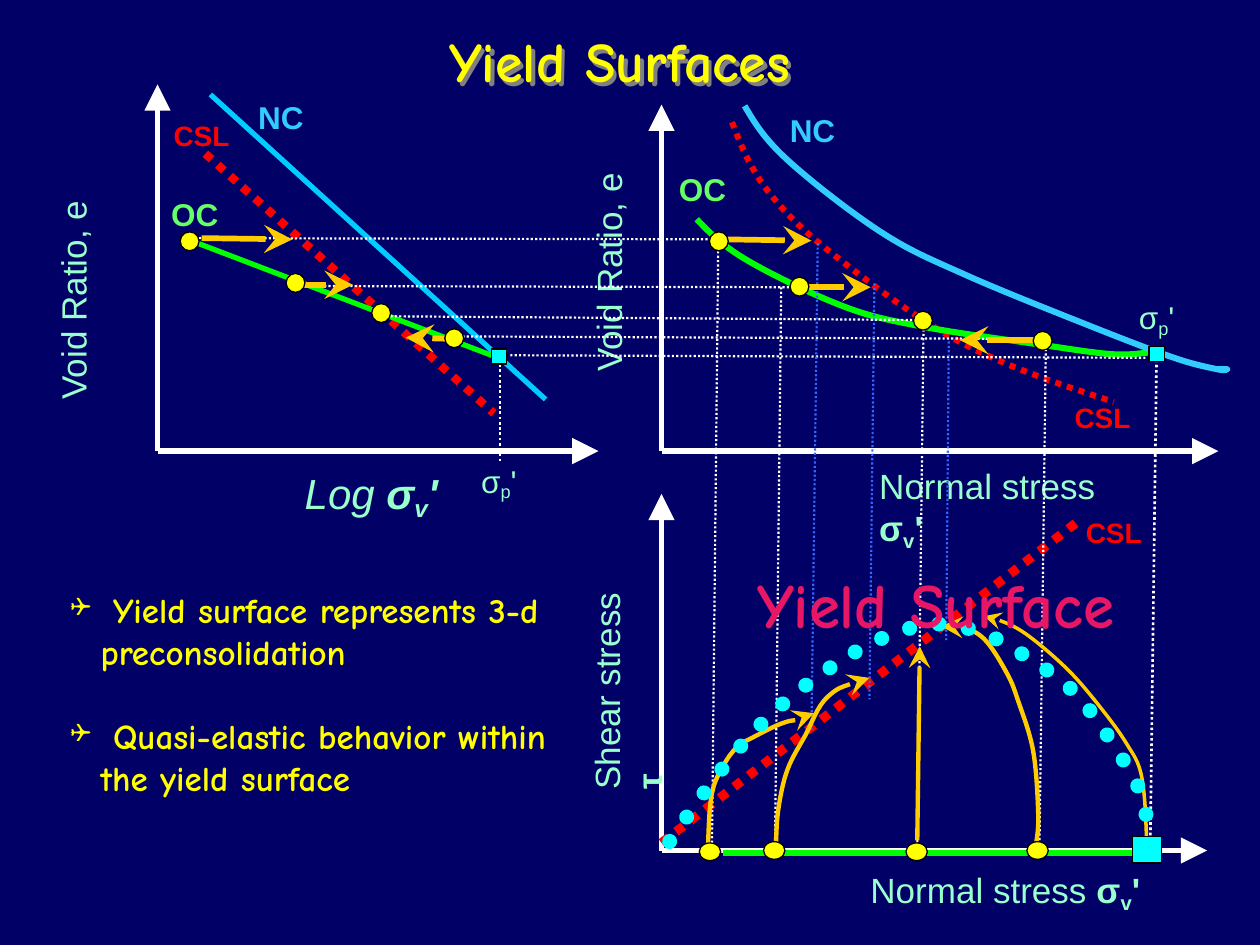
"""Build the soil mechanics slide on yield surfaces with three linked plots."""
from dataclasses import dataclass

from lxml import etree
from pptx import Presentation
from pptx.dml.color import RGBColor
from pptx.enum.dml import MSO_LINE
from pptx.enum.shapes import MSO_CONNECTOR, MSO_SHAPE
from pptx.enum.text import MSO_ANCHOR, PP_ALIGN
from pptx.oxml.ns import qn
from pptx.util import Inches, Pt

STRAIGHT = MSO_CONNECTOR.STRAIGHT
DOTTED = MSO_LINE.ROUND_DOT
CIRCLE, SQUARE = MSO_SHAPE.OVAL, MSO_SHAPE.RECTANGLE
LEFT, CENTER = PP_ALIGN.LEFT, PP_ALIGN.CENTER
TOP, MIDDLE = MSO_ANCHOR.TOP, MSO_ANCHOR.MIDDLE


@dataclass(frozen=True)
class Theme:
    navy: str = "000066"
    white: str = "FFFFFF"
    black: str = "000000"
    yellow: str = "FFFF00"
    mint: str = "99FFCC"
    sky: str = "33CCFF"
    azure: str = "00CCFF"
    red: str = "FF0000"
    green: str = "00FF00"
    pale_green: str = "66FF66"
    orange: str = "FFCC00"
    blue: str = "3366FF"
    cyan: str = "00FFFF"
    crimson: str = "E81766"
    shadow: str = "808080"
    body_font: str = "Arial"
    display_font: str = "Comic Neue"
    banner: int = 36
    title: int = 32
    log_axis: int = 24
    axis: int = 20
    label: int = 18
    small: int = 16


theme = Theme()
presentation = Presentation()
presentation.slide_width, presentation.slide_height = Inches(10), Inches(7.5)
slide = presentation.slides.add_slide(presentation.slide_layouts[6])
slide.background.fill.solid()
slide.background.fill.fore_color.rgb = RGBColor.from_string(theme.navy)
shapes = slide.shapes


def stroke(knots, color, width, dash=None, arrow=None, cap="flat"):
    """Draw a straight line through two knots, or a smooth curve through more."""
    if len(knots) == 2:
        (x1, y1), (x2, y2) = knots
        drawn = shapes.add_connector(STRAIGHT, Inches(x1), Inches(y1), Inches(x2), Inches(y2))
        etree.SubElement(drawn._element.spPr, qn("a:effectLst"))
    else:
        outline = shapes.build_freeform(*map(Inches, knots[0]))
        outline.add_line_segments([tuple(map(Inches, knot)) for knot in knots[1:]], close=False)
        drawn = outline.convert_to_shape()
        drawn.shadow.inherit = False
        drawn.fill.background()
        corner = complex(drawn.left, drawn.top)
        curve = [complex(*map(Inches, knot)) - corner for knot in knots]
        last = len(curve) - 2
        for i, segment in enumerate(list(drawn._element.iter(qn("a:lnTo")))):
            start, end = curve[i:i + 2]
            leave = start + (end - curve[i - 1]) / 6 if i else None
            reach = end - (curve[i + 2] - start) / 6 if i < last else (leave + end) / 2
            leave = (start + reach) / 2 if leave is None else leave
            bend = etree.Element(qn("a:cubicBezTo"))
            for p in (leave, reach, end):
                etree.SubElement(bend, qn("a:pt"), x=str(round(p.real)), y=str(round(p.imag)))
            segment.getparent().replace(segment, bend)
    drawn.line.color.rgb = RGBColor.from_string(color)
    drawn.line.width = Pt(width)
    if dash:
        drawn.line.dash_style = dash
    ln = drawn.line._get_or_add_ln()
    ln.set("cap", cap)
    if arrow:
        etree.SubElement(ln, qn("a:tailEnd"), type=arrow, w="lg", len="lg")


def write(box, paragraphs, size, color, font=theme.body_font, bold=False, wrap=False,
          rotation=0, align=LEFT, anchor=TOP):
    """Add a text box whose runs are (text, bold, italic, baseline) tuples or plain text."""
    text_box = shapes.add_textbox(*map(Inches, box))
    text_box.rotation = rotation
    frame = text_box.text_frame
    frame.word_wrap, frame.vertical_anchor = wrap, anchor
    for i, parts in enumerate(paragraphs):
        paragraph = frame.add_paragraph() if i else frame.paragraphs[0]
        paragraph.alignment = align
        paragraph.font.name, paragraph.font.size = font, Pt(size)
        paragraph.font.bold = bold
        paragraph.font.color.rgb = RGBColor.from_string(color)
        for part in [(parts, None, None, 0)] if isinstance(parts, str) else parts:
            run = paragraph.add_run()
            run.text, run.font.bold, run.font.italic, baseline = part
            if baseline:
                run._r.get_or_add_rPr().set("baseline", str(baseline * 1000))
    return text_box


title = write((0.42, 0.23, 9, 0.5), ["Yield Surfaces"], theme.title, theme.yellow,
              theme.display_font, bold=True, wrap=True, align=CENTER, anchor=MIDDLE)
title_effects = etree.SubElement(title._element.spPr, qn("a:effectLst"))
title_shadow = etree.SubElement(title_effects, qn("a:outerShdw"), dist="35921", dir="2700000")
etree.SubElement(title_shadow, qn("a:srgbClr"), val=theme.shadow)

for origin, top, right in [((1.25, 3.58), 0.67, 4.75), ((5.25, 3.58), 0.83, 9.67),
                           ((5.25, 6.75), 3.92, 9.58)]:
    for tip in [(origin[0], top), (right, origin[1])]:
        stroke([origin, tip], theme.white, 3, arrow="triangle")

vertical_stress = [("σ", True, None, 0), ("v", True, None, -20), ("'", True, None, 0)]
italic_stress = [(text, bold, True, base) for text, bold, _, base in vertical_stress]
normal_stress = [("Normal stress ", None, None, 0)] + vertical_stress
shear_stress = [("Shear stress ", None, None, 0), ("τ", True, None, 0)]
preconsolidation = [("σ", None, None, 0), ("p", None, None, -16), ("'", None, None, 0)]

write((2.32, 3.66, 1.26, 0.5), [[("Log ", None, True, 0)] + italic_stress],
      theme.log_axis, theme.mint)
for box, axis_title, rotation, wrap in [
    ((6.81, 6.84, 2.51, 0.43), normal_stress, 0, True),
    ((6.88, 3.64, 2.3, 0.43), normal_stress, 0, True),
    ((3.83, 5.17, 1.96, 0.43), shear_stress, 270, True),
    ((-0.55, 1.93, 2.25, 0.43), "Void Ratio, e", 270, True),
    ((3.93, 1.94, 1.79, 0.43), "Void Ratio, e", 270, False),
]:
    write(box, [axis_title], theme.axis, theme.mint, wrap=wrap, rotation=rotation)

for name, size, color, box_size, corners in [
    ("NC", theme.label, theme.sky, (0.56, 0.4), [(1.95, 0.73), (6.17, 0.83)]),
    ("OC", theme.label, theme.pale_green, (0.58, 0.4), [(1.26, 1.5), (5.29, 1.3)]),
    ("CSL", theme.small, theme.red, (0.64, 0.37), [(1.28, 0.89), (8.43, 3.13), (8.52, 4.04)]),
]:
    for corner in corners:
        write(corner + box_size, [name], size, color, bold=True)
for corner in [(3.72, 3.62), (8.94, 2.32)]:
    write(corner + (0.55, 0.4), [preconsolidation], theme.label, theme.mint)

stroke([(1.67, 0.75), (4.33, 3.17)], theme.azure, 3)
stroke([(1.63, 1.22), (3.92, 3.28)], theme.red, 4.75, DOTTED)
stroke([(5.25, 6.69), (8.54, 4.15)], theme.red, 5.25, DOTTED)
stroke([(5.81, 0.97), (6.09, 1.51), (6.64, 2.04), (7.65, 2.73), (8.84, 3.19)],
       theme.red, 3.5, DOTTED)
stroke([(1.49, 1.9), (3.98, 2.85)], theme.green, 3)
stroke([(5.53, 1.74), (5.92, 2.06), (6.69, 2.43), (7.31, 2.59), (8.22, 2.73), (8.81, 2.81),
        (9.1, 2.8), (9.16, 2.78), (9.1, 2.8)], theme.green, 3.5)
stroke([(5.74, 6.77), (9.1, 6.77)], theme.green, 3.75)
stroke([(5.91, 0.84), (6.24, 1.26), (6.99, 1.84), (7.66, 2.18), (8.66, 2.59), (9.32, 2.84),
        (9.66, 2.93), (9.74, 2.93), (9.66, 2.93)], theme.sky, 3.5)

for color, width, guides in [
    (theme.white, 1.25, [
        (5.7, 1.96, 5.65, 6.77), (6.2, 2.28, 6.15, 6.78), (7.33, 2.58, 7.28, 6.73),
        (8.3, 2.77, 8.25, 6.71), (1.51, 1.89, 5.87, 1.9), (2.33, 2.27, 6.41, 2.28),
        (3.03, 2.51, 7.3, 2.54), (3.6, 2.67, 8.21, 2.69), (4.05, 2.82, 9.1, 2.84)]),
    (theme.white, 1.5, [(9.18, 2.77, 9.13, 6.64), (3.97, 2.89, 3.97, 3.68)]),
    (theme.white, 1.75, [(6.37, 2.21, 6.34, 2.22)]),
    (theme.blue, 1.25, [
        (6.49, 1.93, 6.44, 5.8), (6.94, 2.25, 6.9, 5.55), (7.53, 2.71, 7.51, 5.08)]),
]:
    for x1, y1, x2, y2 in guides:
        stroke([(x1, y1), (x2, y2)], color, width, DOTTED)

for width, paths in [
    (3.25, [[(1.6, 1.89), (2.32, 1.9)], [(2.39, 2.26), (2.8, 2.26)], [(3.6, 2.69), (3.22, 2.68)],
            [(5.77, 1.9), (6.44, 1.91)], [(6.37, 2.28), (6.91, 2.28)], [(8.21, 2.7), (7.62, 2.7)]]),
    (2.5, [[(5.62, 6.71), (5.65, 6.3), (5.74, 6.08), (5.85, 5.93), (6, 5.84), (6.21, 5.74),
            (6.39, 5.7), (6.46, 5.66)],
           [(6.16, 6.69), (6.18, 6.41), (6.25, 6.11), (6.39, 5.84), (6.57, 5.53), (6.9, 5.38)],
           [(7.28, 6.67), (7.3, 5.13)],
           [(8.22, 6.71), (8.24, 6.46), (8.2, 5.96), (8.08, 5.56), (7.99, 5.34), (7.81, 5.07),
            (7.61, 4.97), (7.47, 4.97)]]),
    (2, [[(9.1, 6.67), (9.06, 6.16), (8.94, 5.9), (8.73, 5.61), (8.47, 5.31), (8.14, 5.03),
          (7.9, 4.91), (7.81, 4.89)]]),
]:
    for stress_path in paths:
        stroke(stress_path, theme.orange, width, arrow="stealth")

bullets = write((0.46, 4.62, 4, 1.77),
                [" Yield surface represents 3-d preconsolidation",
                 " Quasi-elastic behavior within the yield surface"],
                theme.axis, theme.yellow, theme.display_font, bold=True, wrap=True).text_frame
bullets.paragraphs[1].space_before = Pt(24)
for point in bullets.paragraphs:
    properties = point._p.get_or_add_pPr()
    properties.set("marL", str(Inches(0.24)))
    properties.set("indent", str(-Inches(0.24)))
    for tag, key, setting in [("a:buSzPct", "val", "75000"), ("a:buFont", "typeface", "Wingdings"),
                              ("a:buChar", "char", "❑")]:
        properties.find(qn("a:defRPr")).addprevious(etree.Element(qn(tag), {key: setting}))

stroke([(9.1, 6.7), (9.07, 6.34), (8.87, 5.96), (8.55, 5.52), (8.22, 5.26), (7.76, 5.01),
        (7.29, 4.97), (6.68, 5.24), (5.98, 5.81), (5.3, 6.7)], theme.cyan, 8.5, DOTTED, cap="rnd")
write((5.7, 4.44, 3.45, 1.54), ["Yield Surface"], theme.banner, theme.crimson,
      theme.display_font, bold=True, align=CENTER)

for kind, color, size, corners in [
    (CIRCLE, theme.yellow, (0.15, 0.15), [
        (1.43, 1.84), (2.27, 2.17), (2.95, 2.41), (3.53, 2.61),
        (5.63, 1.84), (6.27, 2.2), (7.25, 2.47), (8.2, 2.63)]),
    (CIRCLE, theme.yellow, (0.17, 0.14), [(5.55, 6.69), (6.06, 6.68), (7.19, 6.69), (8.15, 6.68)]),
    (SQUARE, theme.cyan, (0.12, 0.12), [(3.9, 2.77), (9.12, 2.75)]),
    (SQUARE, theme.cyan, (0.23, 0.21), [(8.99, 6.64)]),
]:
    for corner in corners:
        state = shapes.add_shape(kind, *map(Inches, corner + size))
        state.shadow.inherit = False
        state.fill.solid()
        state.fill.fore_color.rgb = RGBColor.from_string(color)
        state.line.color.rgb = RGBColor.from_string(theme.black)
        state.line.width = Pt(0.75)

presentation.save("out.pptx")
